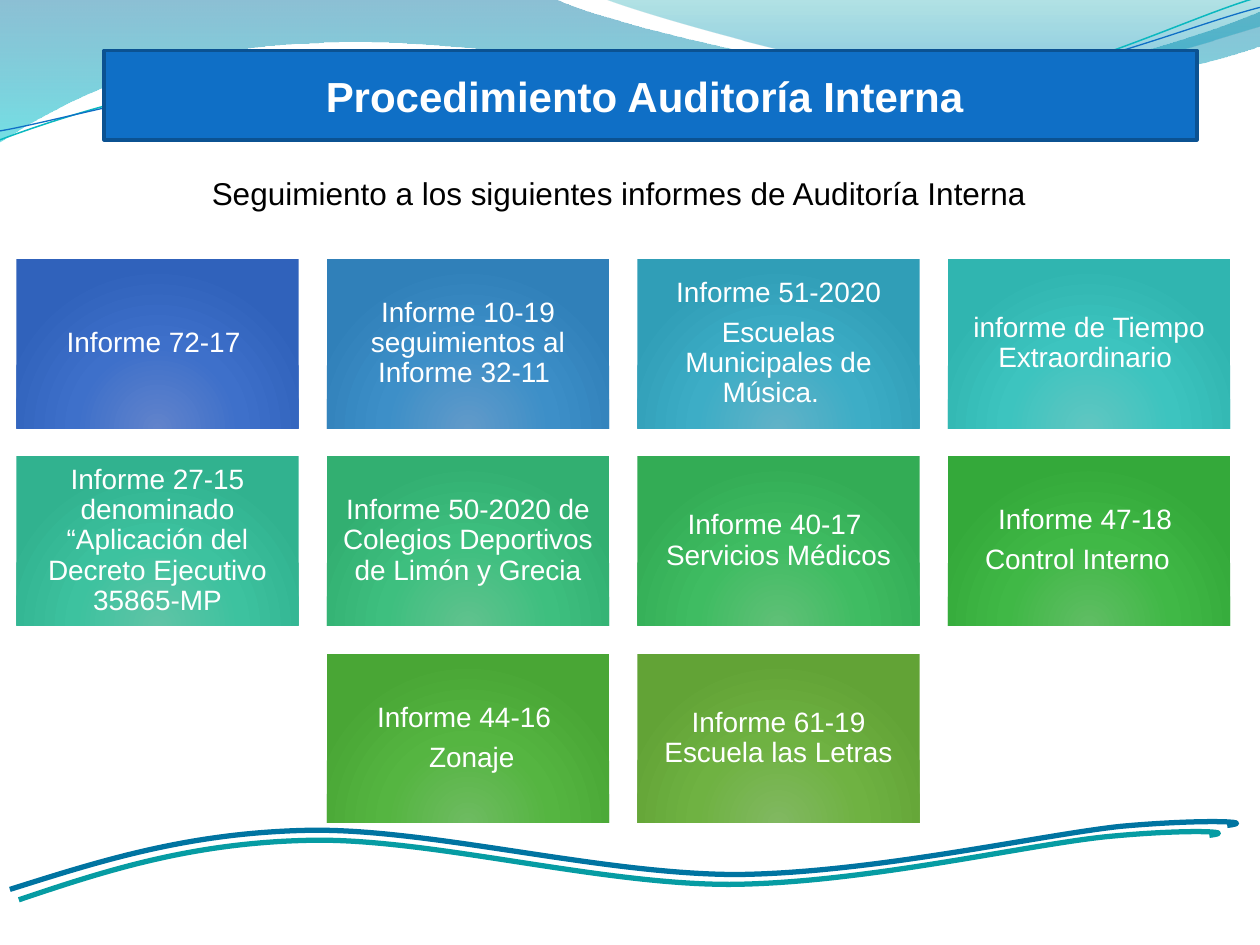
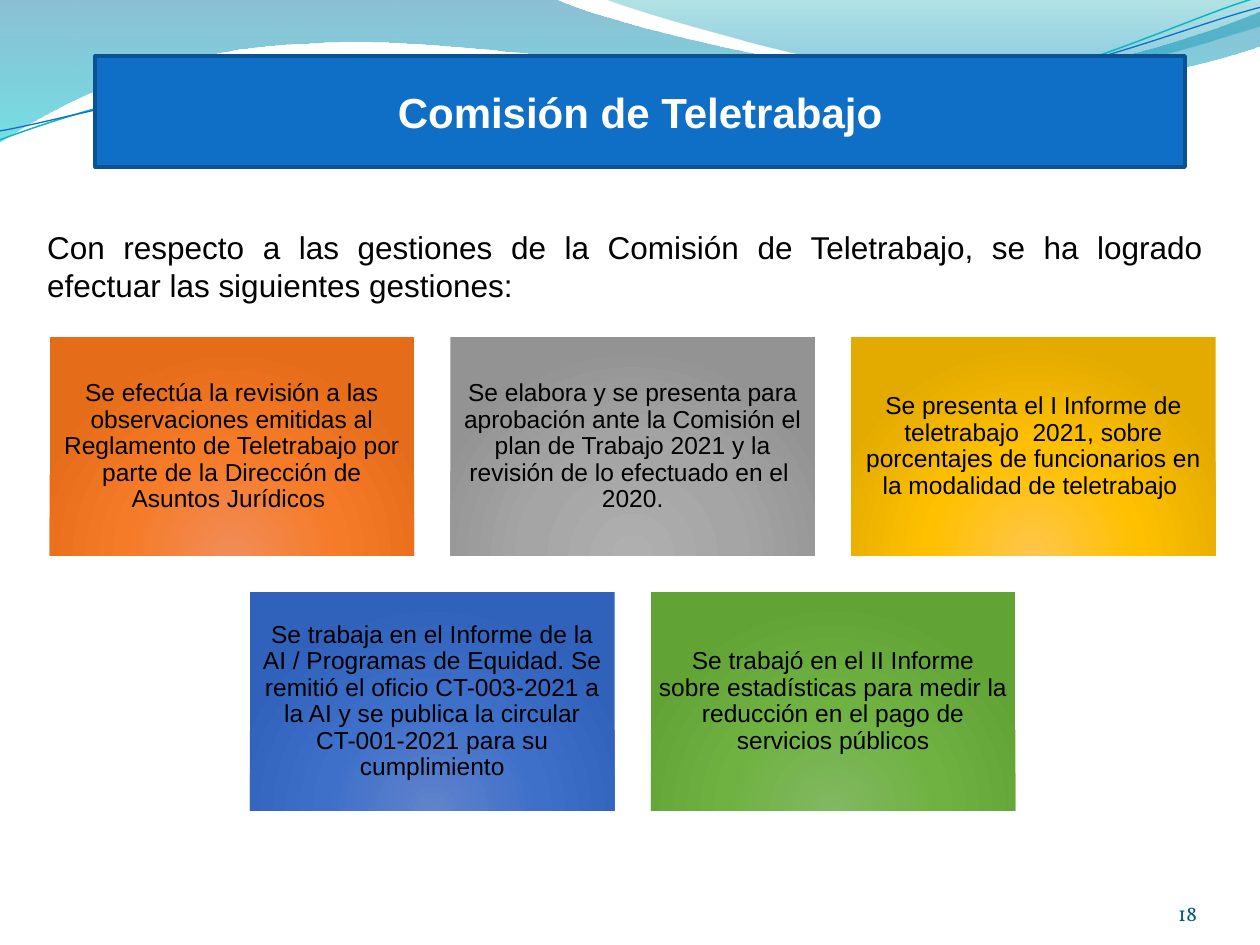
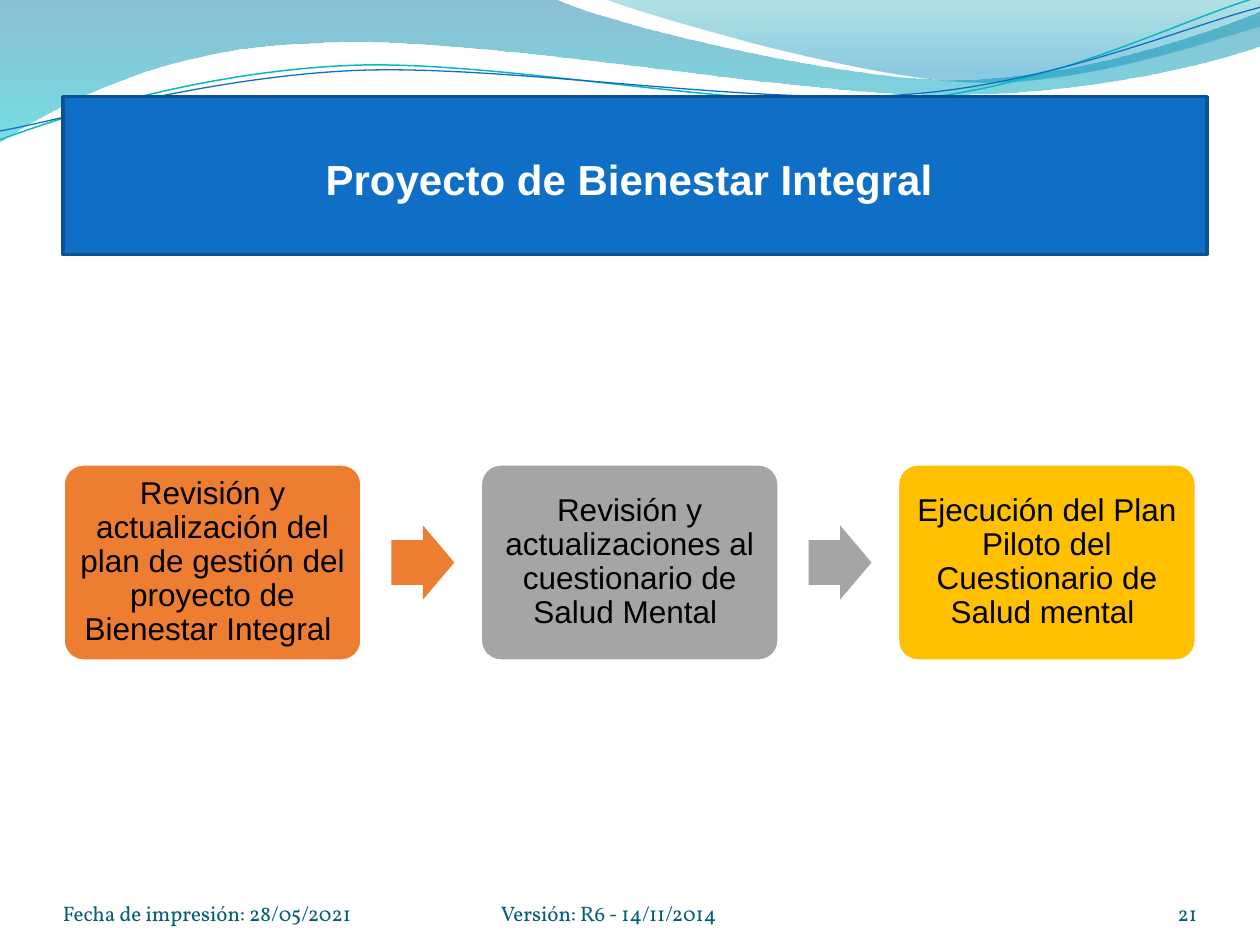
from lxml import etree
from pptx import Presentation
from pptx.dml.color import RGBColor
from pptx.enum.shapes import MSO_SHAPE
from pptx.enum.text import MSO_ANCHOR, PP_ALIGN
from pptx.oxml.ns import qn
from pptx.util import Cm, Pt

RECTANGLE = MSO_SHAPE.RECTANGLE
ROUNDED = MSO_SHAPE.ROUNDED_RECTANGLE
ARROW = MSO_SHAPE.RIGHT_ARROW
LEFT, CENTER, RIGHT, JUSTIFY = PP_ALIGN.LEFT, PP_ALIGN.CENTER, PP_ALIGN.RIGHT, PP_ALIGN.JUSTIFY
TOP, MIDDLE, BOTTOM = MSO_ANCHOR.TOP, MSO_ANCHOR.MIDDLE, MSO_ANCHOR.BOTTOM

COLORS = {
    "title": "0F6FC6", "title_line": "0B5292", "white": "FFFFFF", "black": "000000",
    "footer": "045D75", "teal": "069CA3", "deep_blue": "0074A1", "aqua": "0AB8BF",
    "orange": "ED7D31", "gray": "A5A5A5", "gold": "FFC000",
}

# Glow of each tile: centre, middle, edge
GLOWS = {
    "blue": ("6183CB", "3E70CA", "3062BB"),
    "sky": ("619AC9", "3D8FC8", "3080B9"),
    "cyan": ("61B2C7", "3DADC6", "309EB7"),
    "turquoise": ("60C6C1", "3DC4BF", "30B5B0"),
    "sea": ("60C4A6", "3DC29F", "31B28F"),
    "mint": ("60C28E", "3EBF7F", "32AF71"),
    "emerald": ("60C077", "3FBC62", "33AC55"),
    "green": ("60BD64", "40B846", "34A93A"),
    "leaf": ("6EBB61", "55B541", "49A635"),
    "olive": ("81B861", "6FB242", "62A336"),
    "orange": ("F18C57", "F67B28", "E56C19"),
    "gray": ("AFAFAF", "A5A5A5", "939393"),
    "gold": ("FFC64B", "FFC000", "E3AB00"),
}

# Outlines in cm: a start point, then lines (x, y) or curves (two handles and an end)
HEADER_BANDS = [
    ([(0, 0), (11.18, -0.03), (12.09, 0.43, 16.87, 1.6, 19.25, 1.6),
      (21.67, 1.6, 24.33, 0.66, 25.4, 0.23), (25.43, 0.91),
      (24.97, 1.12, 22.1, 1.93, 18.95, 1.91), (15.8, 1.91, 9.7, 0.71, 6.53, 0.86),
      (3.28, 0.91, 1.17, 2.11, -0.03, 2.87), (0, 0)],
     [(0, "0074A1", 45), (100, "00C6CF", 55)]),
    ([(12.17, -0.03), (12.93, 0.28, 17.32, 1.57, 19.53, 1.65),
      (21.74, 1.75, 24.41, 0.81, 25.4, 0.53), (25.4, 0), (12.17, -0.03)],
     [(0, "00A1A9", 30), (80, "008BBF", 45)]),
]
HEADER_LINES = [
    ([(0, 2.82), (1.22, 2.36, 4.01, 1.45, 7.04, 1.32), (10.03, 1.19, 15.06, 2.26, 18.11, 2.03),
      (21.16, 1.8, 23.83, 0.38, 25.35, -0.05)], "aqua", 0.85),
    ([(0, 2.64), (1.19, 2.44, 4.17, 1.55, 7.19, 1.42), (10.24, 1.3, 15.16, 2.13, 18.21, 1.91),
      (21.23, 1.7, 23.9, 0.53, 25.4, 0.15)], "title", 0.75),
]
BOTTOM_WAVES = [
    ([(0.38, 18.14), (2.13, 17.55, 3.86, 16.99, 6.25, 16.94),
      (8.64, 16.89, 12.04, 17.83, 14.71, 17.83), (17.37, 17.81, 20.65, 17.04, 22.28, 16.87),
      (23.88, 16.71, 25.02, 16.76, 24.38, 16.84)], "teal", 3),
    ([(0.2, 17.93), (1.98, 17.37, 3.76, 16.79, 6.2, 16.74),
      (8.64, 16.69, 12.12, 17.63, 14.86, 17.63), (17.58, 17.6, 20.93, 16.84, 22.58, 16.66),
      (24.23, 16.51, 25.4, 16.56, 24.74, 16.64)], "deep_blue", 3),
]

AUDIT_TITLE = "Procedimiento Auditoría Interna "
AUDIT_INTRO = "Seguimiento a los siguientes informes de Auditoría Interna"
AUDIT_REPORTS = [
    ("Informe 72-17 ", "blue"),
    ("Informe 10-19 seguimientos al Informe 32-11 ", "sky"),
    ("Informe 51-2020\nEscuelas Municipales de Música.  ", "cyan"),
    ("informe de Tiempo Extraordinario ", "turquoise"),
    ("Informe 27-15 denominado “Aplicación del Decreto Ejecutivo 35865-MP", "sea"),
    ("Informe 50-2020 de Colegios Deportivos de Limón y Grecia", "mint"),
    ("Informe 40-17  Servicios Médicos", "emerald"),
    ("Informe 47-18 \nControl Interno   ", "green"),
    ("Informe 44-16 \n Zonaje", "leaf"),
    ("Informe 61-19 Escuela las Letras", "olive"),
]

TELEWORK_TITLE = "Comisión de Teletrabajo"
TELEWORK_INTRO = ("Con respecto a las gestiones de la Comisión de Teletrabajo, se ha logrado "
                  "efectuar las siguientes gestiones: ")
TELEWORK_TASKS = [
    ("Se efectúa la revisión a las observaciones emitidas al Reglamento de Teletrabajo "
     "por parte de la Dirección de Asuntos Jurídicos ", "orange"),
    ("Se elabora y se presenta para aprobación ante la Comisión el plan de Trabajo 2021 "
     "y la revisión de lo efectuado en el  2020.", "gray"),
    ("Se presenta el I Informe de teletrabajo  2021, sobre porcentajes de funcionarios "
     "en la modalidad de teletrabajo ", "gold"),
    ("Se trabaja en el Informe de la AI / Programas de Equidad. Se remitió el oficio "
     "CT-003-2021 a la AI y se publica la circular CT-001-2021 para su cumplimiento", "blue"),
    ("Se trabajó en el II Informe sobre estadísticas para medir la reducción en el pago "
     "de servicios públicos", "olive"),
]

WELLNESS_TITLE = "Proyecto de Bienestar Integral "
WELLNESS_STEPS = [
    ("Revisión y actualización del plan de gestión del proyecto de Bienestar Integral ", "orange"),
    ("Revisión y actualizaciones al cuestionario de Salud Mental ", "gray"),
    ("Ejecución del Plan Piloto del Cuestionario de Salud mental ", "gold"),
]
PRINT_DATE = "Fecha de impresión: 28/05/2021"
VERSION = "Versión: R6 - 14/11/2014"

# Insets in cm: left, top, right, bottom
DEFAULT_INSETS = (0.25, 0.13, 0.25, 0.13)
NO_INSETS = (0, 0, 0, 0)


def rgb(name):
    return RGBColor.from_string(COLORS[name])


def write_text(shape, text, size=18, color="black", font="Arial", bold=False, align=LEFT,
               anchor=TOP, insets=DEFAULT_INSETS, line_spacing=None, space_after=None):
    """Fill a shape with one paragraph for each line of text."""
    frame = shape.text_frame
    frame.word_wrap = True
    frame.vertical_anchor = anchor
    (frame.margin_left, frame.margin_top,
     frame.margin_right, frame.margin_bottom) = map(Cm, insets)
    for index, line in enumerate(text.split("\n")):
        paragraph = frame.paragraphs[0] if index == 0 else frame.add_paragraph()
        paragraph.alignment = align
        if line_spacing:
            paragraph.line_spacing = line_spacing
        if space_after:
            paragraph.space_after = Pt(space_after)
        run = paragraph.add_run()
        run.text = line
        run.font.name, run.font.size, run.font.bold = font, Pt(size), bold
        run.font.color.rgb = rgb(color)


def add_text(slide, box, text, **text_format):
    write_text(slide.shapes.add_textbox(*map(Cm, box)), text, **text_format)


def set_line(shape, color=None, width=1):
    if color is None:
        shape.line.fill.background()
    else:
        shape.line.color.rgb = rgb(color)
        shape.line.width = Pt(width)


def add_block(slide, kind, box, fill=None, line=None, line_width=1):
    shape = slide.shapes.add_shape(kind, *map(Cm, box))
    shape.shadow.inherit = False
    if fill:
        shape.fill.solid()
        shape.fill.fore_color.rgb = rgb(fill)
    set_line(shape, line, line_width)
    return shape


def set_gradient(shape, stops, glow=False):
    """Stops are (position, hex, opacity); a glow spreads from the bottom centre."""
    shape.fill.gradient()
    gradient = shape.element.spPr.find(qn("a:gradFill"))
    for child in list(gradient):
        gradient.remove(child)
    stop_list = etree.SubElement(gradient, qn("a:gsLst"))
    for position, color, opacity in stops:
        stop = etree.SubElement(stop_list, qn("a:gs"), pos=str(position * 1000))
        color_element = etree.SubElement(stop, qn("a:srgbClr"), val=color)
        if opacity < 100:
            etree.SubElement(color_element, qn("a:alpha"), val=str(opacity * 1000))
    if glow:
        spread = etree.SubElement(gradient, qn("a:path"), path="circle")
        etree.SubElement(spread, qn("a:fillToRect"), l="50000", t="100000", r="50000", b="0")
    else:
        etree.SubElement(gradient, qn("a:lin"), ang="5400000", scaled="0")


def add_outline(slide, outline, close):
    """Draw handles and ends as corners, then join each three into a Bézier curve."""
    points = [(Cm(segment[i]), Cm(segment[i + 1]))
              for segment in outline for i in range(0, len(segment), 2)]
    builder = slide.shapes.build_freeform(*points[0])
    builder.add_line_segments(points[1:], close=close)
    shape = builder.convert_to_shape()
    shape.shadow.inherit = False
    corners = iter(list(shape.element.spPr.iter(qn("a:lnTo"))))
    for segment in outline[1:]:
        first = next(corners)
        if len(segment) == 6:
            first.tag = qn("a:cubicBezTo")
            for corner in (next(corners), next(corners)):
                first.append(corner[0])
                corner.getparent().remove(corner)
    return shape


def add_waves(slide, waves):
    for outline, color, width in waves:
        shape = add_outline(slide, outline, close=False)
        shape.fill.background()
        set_line(shape, color, width)


def add_title(slide, box, text, insets=DEFAULT_INSETS):
    shape = add_block(slide, RECTANGLE, box, "title", "title_line", 2)
    write_text(shape, text, size=24, color="white", bold=True, align=CENTER, anchor=MIDDLE,
               insets=insets)


def add_footer(slide, left, width, text, align=LEFT):
    add_text(slide, (left, 17.65, width, 1.02), text, size=12, color="footer",
             font="Vollkorn", align=align, anchor=BOTTOM, insets=NO_INSETS)


def add_page_number(slide, number):
    add_footer(slide, 22.02, 2.11, str(number), RIGHT)


def write_card(shape, text, size, color="black", inset=0.18):
    write_text(shape, text, size=size, color=color, align=CENTER, anchor=MIDDLE,
               insets=(inset,) * 4, line_spacing=0.9, space_after=size * 0.35)


def add_tiles(slide, tiles, columns, left, top, width, height, gap, **card_format):
    """Rows of glowing tiles; a short last row is centred."""
    for index, (text, glow) in enumerate(tiles):
        row, column = divmod(index, columns)
        missing = columns - min(columns, len(tiles) - row * columns)
        x = left + (column + missing / 2) * (width + gap)
        shape = add_block(slide, RECTANGLE, (x, top + row * (height + gap), width, height))
        set_gradient(shape, [(position, color, 100)
                             for position, color in zip((0, 50, 100), GLOWS[glow])], glow=True)
        write_card(shape, text, **card_format)


def add_steps(slide, steps, left=1.29, top=9.37, width=5.99, height=3.94, pitch=8.41):
    arrow_width, arrow_height, arrow_offset = 1.27, 1.5, 6.6
    for index, (text, color) in enumerate(steps):
        x = left + index * pitch
        card = add_block(slide, ROUNDED, (x, top, width, height), color, "white")
        card.adjustments[0] = 0.1
        write_card(card, text, size=18)
        if index < len(steps) - 1:
            arrow = add_block(slide, ARROW, (x + arrow_offset, top + (height - arrow_height) / 2,
                                             arrow_width, arrow_height), color)
            arrow.adjustments[0], arrow.adjustments[1] = 0.6, 0.5


def new_slide(presentation):
    slide = presentation.slides.add_slide(presentation.slide_layouts[6])
    for outline, stops in HEADER_BANDS:
        band = add_outline(slide, outline, close=True)
        set_gradient(band, stops)
        set_line(band)
    add_waves(slide, HEADER_LINES)
    return slide


def main():
    presentation = Presentation()
    presentation.slide_width, presentation.slide_height = Cm(25.4), Cm(19.05)

    # Internal audit reports
    slide = new_slide(presentation)
    add_waves(slide, BOTTOM_WAVES)
    add_title(slide, (2.1, 1.02, 22.03, 1.8), AUDIT_TITLE)
    add_text(slide, (4.02, 3.37, 17.07, 1.02), AUDIT_INTRO)
    add_tiles(slide, AUDIT_REPORTS, columns=4, left=0.33, top=5.22, width=5.69, height=3.41,
              gap=0.57, size=16, color="white")

    # Telework commission
    slide = new_slide(presentation)
    add_page_number(slide, 18)
    add_title(slide, (1.92, 1.13, 21.97, 2.24), TELEWORK_TITLE)
    add_text(slide, (0.7, 4.47, 23.8, 1.8), TELEWORK_INTRO, align=JUSTIFY)
    add_tiles(slide, TELEWORK_TASKS, columns=3, left=1, top=6.8, width=7.35, height=4.41,
              gap=0.73, size=14, inset=0.15)

    # Wellness project
    slide = new_slide(presentation)
    add_title(slide, (1.27, 1.95, 23.06, 3.18), WELLNESS_TITLE, insets=(0, 0.13, 0, 0))
    add_footer(slide, 1.27, 5.92, PRINT_DATE)
    add_footer(slide, 10.1, 6.63, VERSION)
    add_page_number(slide, 21)
    add_steps(slide, WELLNESS_STEPS)

    presentation.save("out.pptx")


if __name__ == "__main__":
    main()
